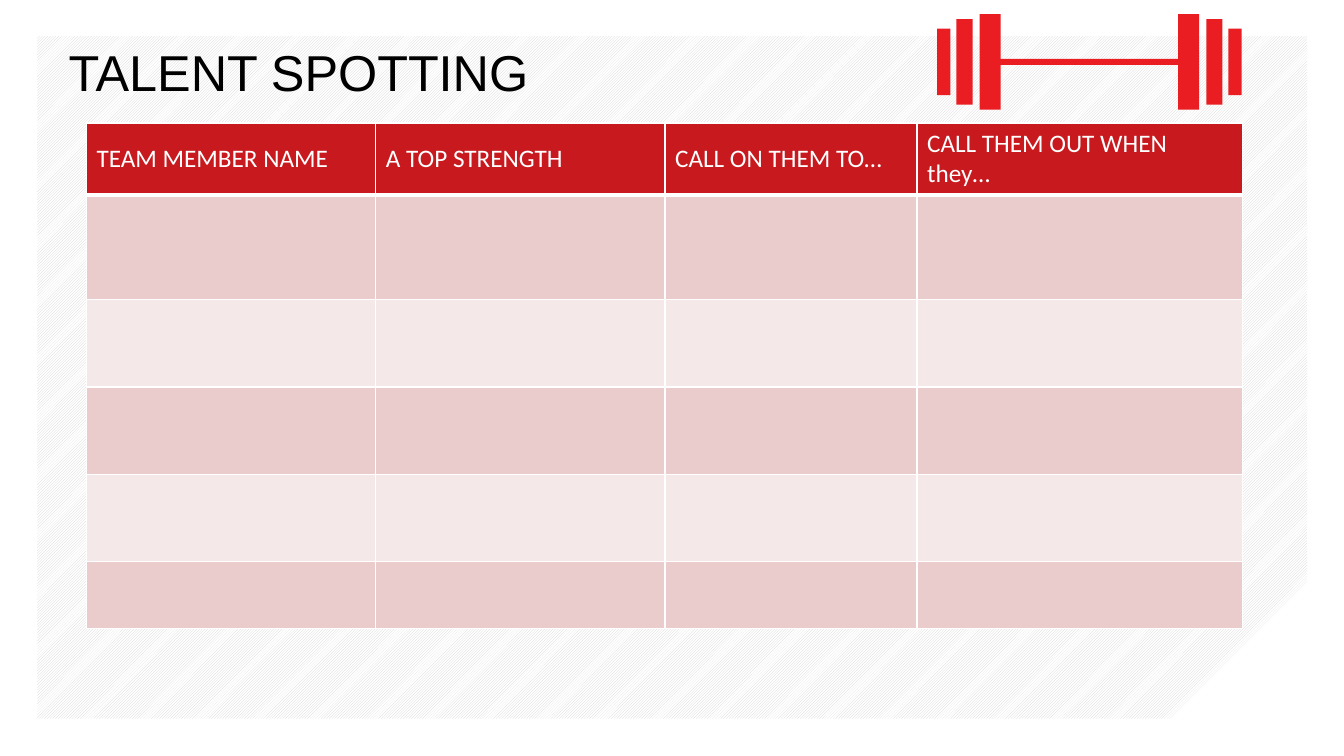
from dataclasses import dataclass

from lxml.etree import SubElement
from pptx import Presentation
from pptx.dml.color import RGBColor
from pptx.enum.dml import MSO_PATTERN
from pptx.enum.shapes import MSO_SHAPE
from pptx.enum.text import MSO_ANCHOR, PP_ALIGN
from pptx.oxml.ns import qn
from pptx.util import Cm, Pt

TITLE = "TALENT SPOTTING"
HEADERS = ("TEAM MEMBER NAME", "A TOP STRENGTH", "CALL ON THEM TO…", "CALL THEM OUT WHEN they…")
COLUMN_WIDTHS = (7.29, 7.29, 6.35, 8.2)
ROW_HEIGHTS = (1.81, 2.64, 2.2, 2.2, 2.2, 1.68)
TABLE_LEFT, TABLE_TOP = 2.18, 3.1

# Dumbbell plates: offset from the end of the dumbbell, width, height
PLATES = ((0, 0.33, 1.68), (0.48, 0.41, 2.16), (1.07, 0.53, 2.41))
DUMBBELL_LEFT, DUMBBELL_RIGHT, DUMBBELL_MIDDLE = 23.62, 31.29, 1.56
BAR_OFFSET, BAR_HEIGHT = 1.47, 0.15

SLIDE_WIDTH, SLIDE_HEIGHT = 33.87, 19.05
CORNER_SIDE = 5.28


@dataclass(frozen=True)
class Theme:
    white: str = "FFFFFF"
    black: str = "000000"
    hatch: str = "D4D4D4"
    header: str = "C8191E"
    dark_band: str = "EBCCCD"
    light_band: str = "F5E8E8"
    dumbbell: str = "E91D22"
    title_font: str = "Arial"
    table_font: str = "Calibri"
    title_size: int = 36
    table_size: int = 18


THEME = Theme()


def color(value):
    return RGBColor.from_string(value)


def add_plain_shape(page, kind, left, top, width, height, fill):
    shape = page.shapes.add_shape(kind, Cm(left), Cm(top), Cm(width), Cm(height))
    shape.shadow.inherit = False
    shape.line.fill.background()
    shape.fill.solid()
    shape.fill.fore_color.rgb = color(fill)
    return shape


def write(para, text, font, size, ink):
    span = para.add_run()
    span.text = text
    span.font.name = font
    span.font.size = Pt(size)
    span.font.color.rgb = color(ink)


def add_backdrop(page):
    """Hatched panel with its bottom right corner cut off."""
    panel = add_plain_shape(page, MSO_SHAPE.RECTANGLE, 0.94, 0.91, 32, 17.2, THEME.white)
    panel.fill.patterned()
    panel.fill.pattern = MSO_PATTERN.LIGHT_UPWARD_DIAGONAL
    panel.fill.fore_color.rgb = color(THEME.hatch)
    panel.fill.back_color.rgb = color(THEME.white)
    corner = add_plain_shape(page, MSO_SHAPE.RIGHT_TRIANGLE, SLIDE_WIDTH - CORNER_SIDE,
                             SLIDE_HEIGHT - CORNER_SIDE, CORNER_SIDE, CORNER_SIDE, THEME.white)
    corner.rotation = 270


def place_title(page):
    title = page.shapes.title
    title.element.getparent().append(title.element)  # in front of the backdrop
    title.left, title.top, title.width, title.height = Cm(1.73), Cm(0.81), Cm(23.47), Cm(1.96)
    frame = title.text_frame
    frame.margin_left = frame.margin_right = frame.margin_top = frame.margin_bottom = 0
    frame.vertical_anchor = MSO_ANCHOR.MIDDLE
    para = frame.paragraphs[0]
    para.alignment = PP_ALIGN.LEFT
    write(para, TITLE, THEME.title_font, THEME.title_size, THEME.black)


def set_borders(cell, bottom_points):
    properties = cell._tc.get_or_add_tcPr()
    for side, points in (("L", 1), ("R", 1), ("T", 1), ("B", bottom_points)):
        line = SubElement(properties, qn(f"a:ln{side}"), w=str(Pt(points)))
        SubElement(SubElement(line, qn("a:solidFill")), qn("a:srgbClr"), val=THEME.white)


def add_talent_table(page):
    table = page.shapes.add_table(
        len(ROW_HEIGHTS), len(HEADERS), Cm(TABLE_LEFT), Cm(TABLE_TOP),
        Cm(sum(COLUMN_WIDTHS)), Cm(sum(ROW_HEIGHTS))).table
    for column, width in zip(table.columns, COLUMN_WIDTHS):
        column.width = Cm(width)
    for index, (row, height) in enumerate(zip(table.rows, ROW_HEIGHTS)):
        row.height = Cm(height)
        band = THEME.dark_band if index % 2 else THEME.light_band
        for cell in row.cells:
            set_borders(cell, 1 if index else 3)
            cell.fill.solid()
            cell.fill.fore_color.rgb = color(band if index else THEME.header)
    for cell, header in zip(table.rows[0].cells, HEADERS):
        cell.vertical_anchor = MSO_ANCHOR.MIDDLE
        write(cell.text_frame.paragraphs[0], header,
              THEME.table_font, THEME.table_size, THEME.white)


def add_dumbbell(page):
    bar_width = DUMBBELL_RIGHT - DUMBBELL_LEFT - 2 * BAR_OFFSET
    parts = [(DUMBBELL_LEFT + BAR_OFFSET, bar_width, BAR_HEIGHT)]
    for offset, width, height in PLATES:
        parts.append((DUMBBELL_LEFT + offset, width, height))
        parts.append((DUMBBELL_RIGHT - offset - width, width, height))
    for left, width, height in parts:
        add_plain_shape(page, MSO_SHAPE.RECTANGLE, left, DUMBBELL_MIDDLE - height / 2,
                        width, height, THEME.dumbbell)


def main():
    deck = Presentation()
    deck.slide_width, deck.slide_height = Cm(SLIDE_WIDTH), Cm(SLIDE_HEIGHT)
    page = deck.slides.add_slide(deck.slide_layouts.get_by_name("Title Only"))
    add_backdrop(page)
    place_title(page)
    add_talent_table(page)
    add_dumbbell(page)
    deck.save("out.pptx")


if __name__ == "__main__":
    main()
